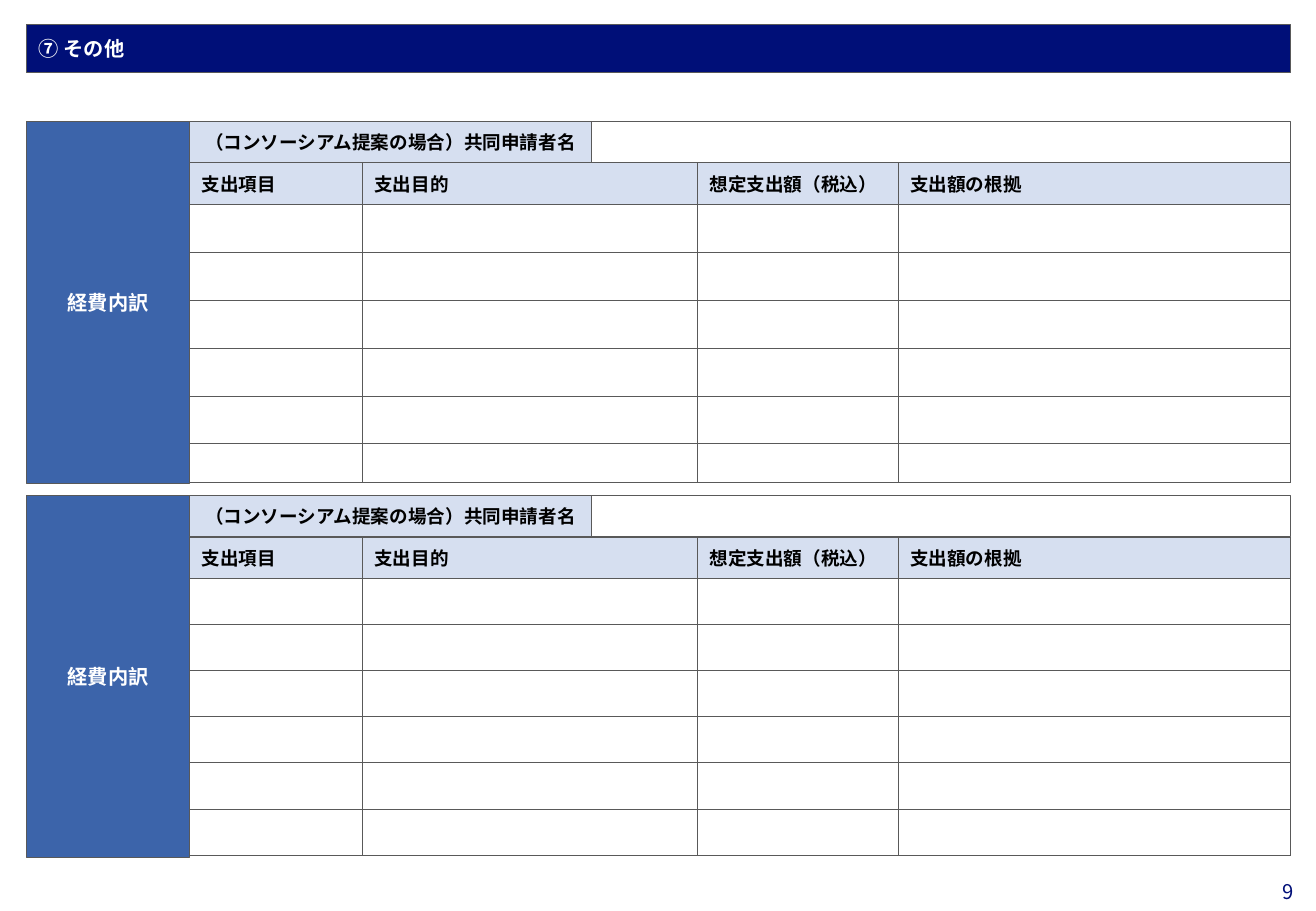
from dataclasses import dataclass

from lxml import etree
from pptx import Presentation
from pptx.dml.color import RGBColor
from pptx.enum.shapes import MSO_SHAPE
from pptx.enum.text import MSO_ANCHOR, MSO_AUTO_SIZE, PP_ALIGN
from pptx.oxml.ns import qn
from pptx.util import Inches, Pt

RECTANGLE = MSO_SHAPE.RECTANGLE
MIDDLE = MSO_ANCHOR.MIDDLE
NO_AUTOFIT = MSO_AUTO_SIZE.NONE
LEFT, CENTER, RIGHT = PP_ALIGN.LEFT, PP_ALIGN.CENTER, PP_ALIGN.RIGHT

NAVY = RGBColor(0x00, 0x0F, 0x78)
BLUE = RGBColor(0x3C, 0x64, 0xAA)
PALE_BLUE = RGBColor(0xD6, 0xDF, 0xF0)
GRAY = RGBColor(0x59, 0x59, 0x59)
WHITE = RGBColor(0xFF, 0xFF, 0xFF)
BLACK = RGBColor(0x00, 0x00, 0x00)

FONT = "Noto Sans CJK JP"
BORDER = Pt(0.5)
SLIDE_WIDTH, SLIDE_HEIGHT = Inches(10.83), Inches(7.5)
GRID_COLUMNS, GRID_ROWS = 1083, 750

MARGIN = 22
CATEGORY_WIDTH = 134
APPLICANT_LABEL_WIDTH = 331
HEADER_HEIGHT = 34
BLOCK_HEIGHT = 298
EXPENSE_COLUMNS = {
    "支出項目": 142,
    "支出目的": 276,
    "想定支出額（税込）": 165,
    "支出額の根拠": 323,
}
TABLE_LEFT = MARGIN + CATEGORY_WIDTH
TABLE_WIDTH = sum(EXPENSE_COLUMNS.values())


@dataclass(frozen=True)
class Area:
    column: float
    row: float
    columns: float
    rows: float

    def box(self) -> tuple[int, int, int, int]:
        return (across(self.column), down(self.row),
                across(self.columns), down(self.rows))


@dataclass(frozen=True)
class TextStyle:
    size: int
    color: RGBColor
    bold: bool = True
    align: PP_ALIGN = LEFT


@dataclass(frozen=True)
class Panel:
    area: Area
    fill: RGBColor
    text: str = ""
    style: TextStyle | None = None


@dataclass(frozen=True)
class ExpenseBlock:
    top: float
    entry_heights: tuple[float, ...]


HEADING = TextStyle(12, WHITE)
CATEGORY = TextStyle(12, WHITE, align=CENTER)
APPLICANT = TextStyle(11, BLACK, align=CENTER)
COLUMN_HEADING = TextStyle(11, BLACK)
PAGE_NUMBER = TextStyle(12, NAVY, bold=False, align=RIGHT)
ENTRY_SIZE = 10

EXPENSE_BLOCKS = (
    ExpenseBlock(100, (39.5,) * 5 + (32,)),
    ExpenseBlock(408, (38,) * 6),
)


def across(columns: float) -> int:
    return round(SLIDE_WIDTH * columns / GRID_COLUMNS)


def down(rows: float) -> int:
    return round(SLIDE_HEIGHT * rows / GRID_ROWS)


def write(frame, text: str, style: TextStyle) -> None:
    paragraph = frame.paragraphs[0]
    paragraph.alignment = style.align
    run = paragraph.add_run()
    run.text = text
    run.font.size = Pt(style.size)
    run.font.bold = style.bold
    run.font.color.rgb = style.color
    run.font.name = FONT
    etree.SubElement(run.font._element, qn("a:ea"), typeface=FONT)


def paint(shape, fill: RGBColor) -> None:
    shape.fill.solid()
    shape.fill.fore_color.rgb = fill
    shape.line.color.rgb = GRAY
    shape.line.width = BORDER


def draw_panel(slide, panel: Panel) -> None:
    shape = slide.shapes.add_shape(RECTANGLE, *panel.area.box())
    shape.shadow.inherit = False
    paint(shape, panel.fill)
    shape.text_frame.vertical_anchor = MIDDLE
    if panel.style:
        write(shape.text_frame, panel.text, panel.style)


def draw_heading(slide, area: Area, text: str) -> None:
    heading = slide.shapes.title
    heading.left, heading.top, heading.width, heading.height = area.box()
    paint(heading, NAVY)
    frame = heading.text_frame
    frame.auto_size = NO_AUTOFIT
    frame.vertical_anchor = MIDDLE
    write(frame, text, HEADING)


def draw_page_number(slide, area: Area, text: str) -> None:
    frame = slide.shapes.add_textbox(*area.box()).text_frame
    frame.word_wrap = True
    frame.vertical_anchor = MIDDLE
    frame.margin_left = frame.margin_top = frame.margin_bottom = 0
    frame.margin_right = across(18)
    write(frame, text, PAGE_NUMBER)


def add_borders(cell) -> None:
    properties = cell._tc.get_or_add_tcPr()
    for position, side in enumerate(("a:lnL", "a:lnR", "a:lnT", "a:lnB")):
        edge = etree.Element(qn(side), w=str(int(BORDER)))
        solid = etree.SubElement(edge, qn("a:solidFill"))
        etree.SubElement(solid, qn("a:srgbClr"), val=str(GRAY))
        properties.insert(position, edge)


def draw_expense_table(slide, block: ExpenseBlock) -> None:
    heights = (HEADER_HEIGHT, *block.entry_heights)
    area = Area(TABLE_LEFT, block.top + HEADER_HEIGHT, TABLE_WIDTH, sum(heights))
    table = slide.shapes.add_table(
        len(heights), len(EXPENSE_COLUMNS), *area.box()).table
    table.first_row = table.horz_banding = False
    for column, width in zip(table.columns, EXPENSE_COLUMNS.values()):
        column.width = across(width)
    for row, height in zip(table.rows, heights):
        row.height = down(height)
        for cell in row.cells:
            cell.vertical_anchor = MIDDLE
            cell.fill.background()
            add_borders(cell)
            etree.SubElement(cell.text_frame.paragraphs[0]._p,
                             qn("a:endParaRPr"), sz=str(ENTRY_SIZE * 100))
    for cell, name in zip(table.rows[0].cells, EXPENSE_COLUMNS):
        cell.fill.solid()
        cell.fill.fore_color.rgb = PALE_BLUE
        write(cell.text_frame, name, COLUMN_HEADING)


def draw_expense_block(slide, block: ExpenseBlock) -> None:
    draw_expense_table(slide, block)
    panels = (
        Panel(Area(MARGIN, block.top, CATEGORY_WIDTH, BLOCK_HEIGHT),
              BLUE, "経費内訳", CATEGORY),
        Panel(Area(TABLE_LEFT, block.top, APPLICANT_LABEL_WIDTH, HEADER_HEIGHT),
              PALE_BLUE, "（コンソーシアム提案の場合）共同申請者名", APPLICANT),
        Panel(Area(TABLE_LEFT + APPLICANT_LABEL_WIDTH, block.top,
                   TABLE_WIDTH - APPLICANT_LABEL_WIDTH, HEADER_HEIGHT), WHITE),
    )
    for panel in panels:
        draw_panel(slide, panel)


def main() -> None:
    presentation = Presentation()
    presentation.slide_width = SLIDE_WIDTH
    presentation.slide_height = SLIDE_HEIGHT
    slide = presentation.slides.add_slide(presentation.slide_layouts[5])
    draw_heading(slide, Area(MARGIN, 20, CATEGORY_WIDTH + TABLE_WIDTH, 40), "⑦ その他")
    for block in EXPENSE_BLOCKS:
        draw_expense_block(slide, block)
    draw_page_number(slide, Area(1030, 724, 53, 19), "9")
    presentation.save("out.pptx")


if __name__ == "__main__":
    main()
